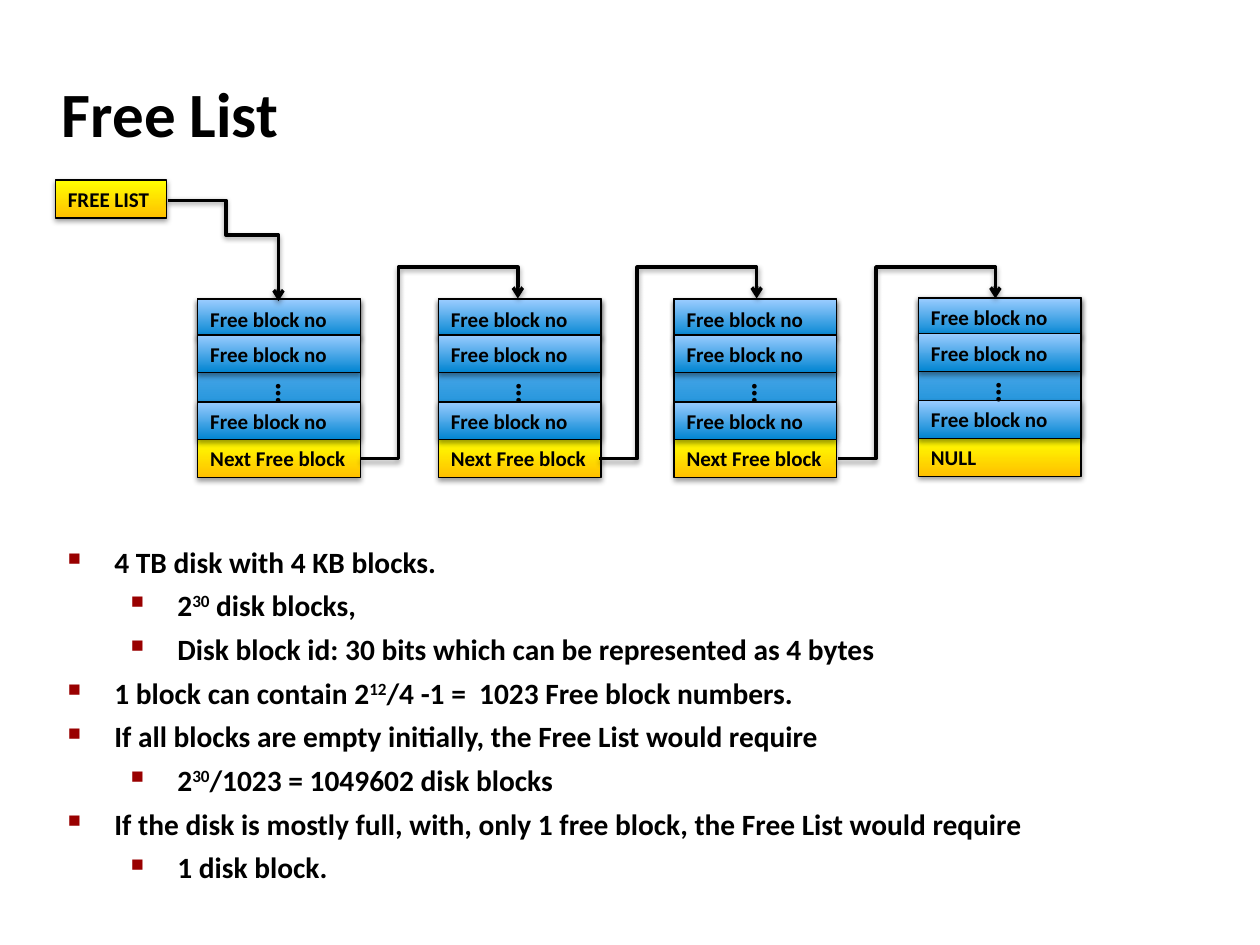
"""Build a slide showing a disk free list as linked index blocks."""
from lxml import etree
from pptx import Presentation
from pptx import util as u
from pptx.dml.color import RGBColor
from pptx.enum import shapes, text
from pptx.oxml.ns import qn

COLOURS = {
    "ink": "000000",
    "bullet": "990000",
    "sky": "99CCFF",
    "ocean": "0084D1",
    "yellow": "FFFF00",
    "amber": "FFC000",
}
BLUE, GOLD = ("sky", "ocean"), ("yellow", "amber")


def write(para, content, size=12, align=text.PP_ALIGN.LEFT):
    para.alignment = align
    for index, part in enumerate(content.split("^")):
        span = para.add_run()
        span.text = part
        span.font.name = "Calibri"
        span.font.size = u.Pt(size)
        span.font.bold = True
        span.font.color.rgb = RGBColor.from_string(COLOURS["ink"])
        if index % 2:
            span._r.get_or_add_rPr().set("baseline", "30000")


def outline_and_shade(item, width):
    item.line.color.rgb = RGBColor.from_string(COLOURS["ink"])
    item.line.width = u.Pt(width)
    effects = etree.SubElement(item._element.spPr, qn("a:effectLst"))
    shadow = etree.SubElement(
        effects, qn("a:outerShdw"), blurRad=str(u.Pt(3.1)), dist=str(u.Pt(1.6)),
        dir="5400000", rotWithShape="0")
    colour = etree.SubElement(shadow, qn("a:srgbClr"), val=COLOURS["ink"])
    etree.SubElement(colour, qn("a:alpha"), val="38000")


deck = Presentation()
deck.slide_width, deck.slide_height = u.Inches(10), u.Inches(7.5)
cell = deck.slide_width / 100
page = deck.slides.add_slide(deck.slide_layouts[5])

title = page.shapes.title
title.left, title.top, title.width, title.height = (
    round(value * cell) for value in (3.9, 4.8, 83, 8.3))
title.text_frame.vertical_anchor = text.MSO_ANCHOR.MIDDLE
title.text_frame.auto_size = text.MSO_AUTO_SIZE.NONE
write(title.text_frame.paragraphs[0], "Free List", size=36)

outline = [
    (0, "4 TB disk with 4 KB blocks."),
    (1, "2^30^ disk blocks,"),
    (1, "Disk block id: 30 bits which can be represented as 4 bytes"),
    (0, "1 block can contain 2^12^/4 -1 =  1023 Free block numbers."),
    (0, "If all blocks are empty initially, the Free List would require"),
    (1, "2^30^/1023 = 1049602 disk blocks"),
    (0, "If the disk is mostly full, with, only 1 free block, the Free List would require"),
    (1, "1 disk block."),
]
notes_box = page.shapes.add_textbox(*(round(value * cell) for value in (4.3, 43.2, 86.4, 26.1)))
notes_box.text_frame.word_wrap = True
for index, (level, content) in enumerate(outline):
    para = notes_box.text_frame.add_paragraph() if index else notes_box.text_frame.paragraphs[0]
    para.level = level
    para.space_before = u.Pt(4.8)
    if index == 0:
        para.line_spacing = 0.8
    write(para, content, size=16.8)
    marks = para._p.get_or_add_pPr()
    marks.set("marL", str(round((3.8 + 5 * level) * cell)))
    marks.set("indent", str(round(-3.7 * cell)))
    colour = etree.SubElement(marks, qn("a:buClr"))
    etree.SubElement(colour, qn("a:srgbClr"), val=COLOURS["bullet"])
    etree.SubElement(marks, qn("a:buSzPct"), val="60000")
    etree.SubElement(marks, qn("a:buChar"), char="■")

block_width, row_height = 12.9, 3
stacks = [
    (15.7, 23.7, "Next Free block"),
    (34.8, 23.7, "Next Free block"),
    (53.5, 23.7, "Next Free block"),
    (72.9, 23.6, "NULL"),
]
boxes = [(4.4, 14.3, 8.8, row_height, GOLD, "FREE LIST")]
for left, top, pointer in stacks:
    boxes.append((left, top, block_width, 11, BLUE, ""))
    boxes.append((left, top + 11.2, block_width, row_height, GOLD, pointer))
    for offset in (0.1, 2.9, 8.2):
        boxes.append((left, top + offset, block_width, row_height, BLUE, "Free block no"))

for *place, shades, label in boxes:
    box = page.shapes.add_shape(
        shapes.MSO_SHAPE.RECTANGLE, *(round(value * cell) for value in place))
    box.fill.gradient()
    box.fill.gradient_angle = 270
    for stop, shade in zip(box.fill.gradient_stops, shades):
        stop.color.rgb = RGBColor.from_string(COLOURS[shade])
    outline_and_shade(box, 0.75)
    if label:
        box.text_frame.vertical_anchor = text.MSO_ANCHOR.MIDDLE
        box.text_frame.word_wrap = True
        write(box.text_frame.paragraphs[0], label)

for left, top, pointer in stacks:
    dots = page.shapes.add_textbox(
        *(round(value * cell) for value in (left + 4.2, top + 5.7, 5, 2.8)))
    dots.text_frame.word_wrap = False
    dots.text_frame.auto_size = text.MSO_AUTO_SIZE.SHAPE_TO_FIT_TEXT
    dots.text_frame._txBody.bodyPr.set("vert", "vert")
    write(dots.text_frame.paragraphs[0], "…", size=18)

links = [((13.3, 15.9, 22.1, 23.9), (52500, 34400))]
for index in range(len(stacks) - 1):
    start = 28.6 + 18.95 * index
    links.append(((start, 36.4, start + 12.5, 23.7), (24200, 119700)))
for ends, bends in links:
    link = page.shapes.add_connector(
        shapes.MSO_CONNECTOR.ELBOW, *(round(value * cell) for value in ends))
    geometry = link._element.spPr.find(qn("a:prstGeom"))
    geometry.set("prst", "bentConnector4")
    guides = geometry.find(qn("a:avLst"))
    for number, bend in enumerate(bends, 1):
        etree.SubElement(guides, qn("a:gd"), name=f"adj{number}", fmla=f"val {bend}")
    outline_and_shade(link, 2)
    etree.SubElement(link.line._get_or_add_ln(), qn("a:tailEnd"), type="arrow")

deck.save("out.pptx")
